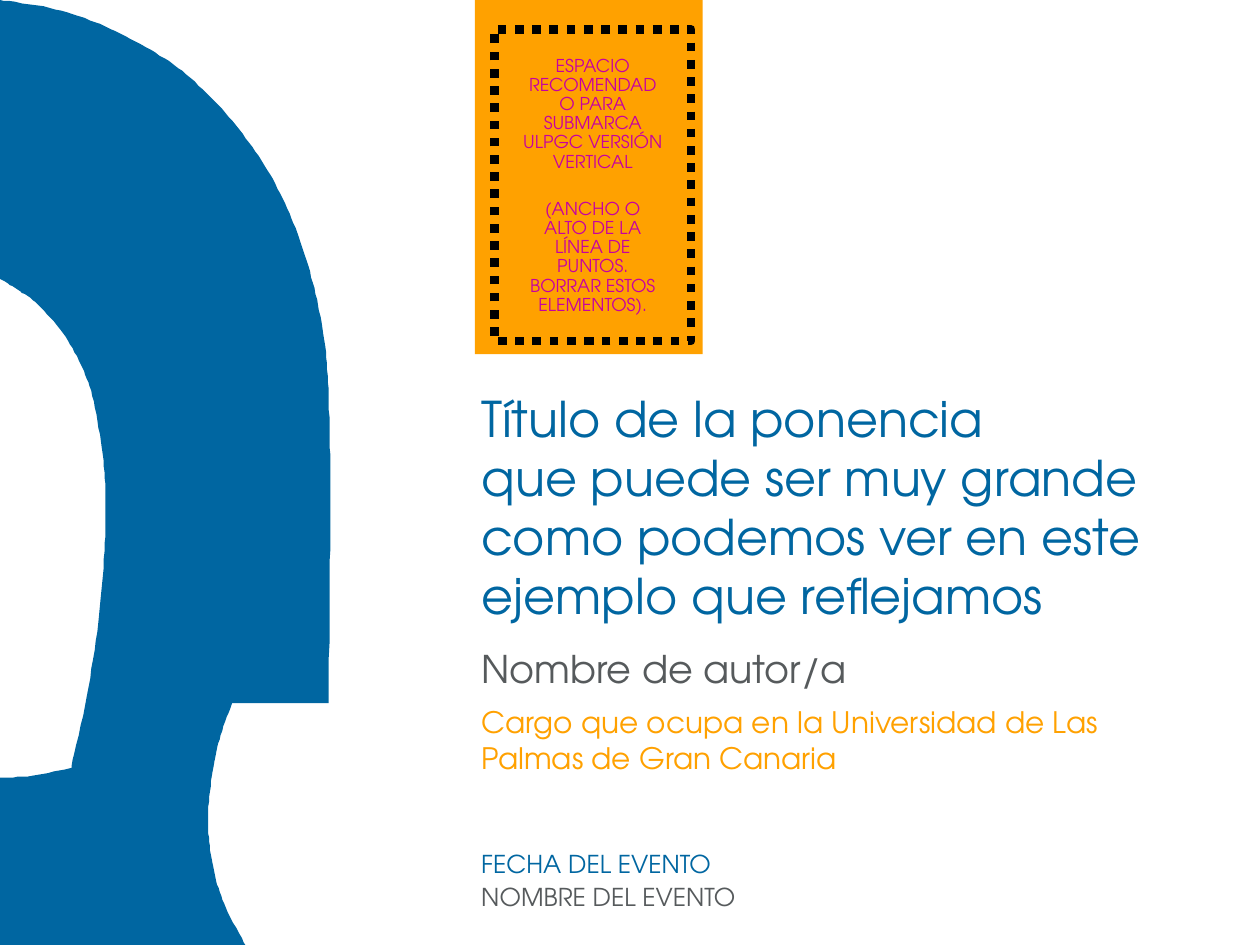
from pptx import Presentation
from pptx import util as u
from pptx.dml.color import RGBColor
from pptx.enum import dml, shapes, text

COLUMNS, ROWS = 1422, 1067
CELL = u.Inches(0.01)
FONT = "TeX Gyre Adventor"
COLORS = {"blue": "0066A1", "orange": "FFA100", "grey": "565A5C",
          "magenta": "C600A2", "black": "000000"}
CURVE_STEPS = 8

OUTER_ARCH = [(0, 0), (56, 9), (107, 25), (153, 47), (196, 73), (233, 105),
              (266, 141), (295, 181), (319, 224), (338, 270), (353, 319),
              (364, 371), (370, 424), (372, 488), (373, 565), (372, 678), (371, 794)]
NECK = [(262, 794), (249, 830), (240, 871), (235, 916), (236, 950),
        (243, 990), (255, 1025), (277, ROWS)]
INNER_BASE = [(0, 878), (36, 876), (81, 867)]
INNER_ARCH = [(81, 864), (98, 786), (111, 703), (118, 623), (119, 560),
              (115, 506), (104, 447), (91, 411), (71, 376), (43, 344),
              (20, 327), (0, 315)]
OUTLINE = [OUTER_ARCH, NECK, [(0, ROWS)], INNER_BASE, INNER_ARCH]

TITLE = ["Título de la ponencia", "que puede ser muy grande",
         "como podemos ver en este", "ejemplo que reflejamos"]
NOTE = ["ESPACIO RECOMENDADO PARA SUBMARCA ULPGC VERSIÓN VERTICAL",
        "(ANCHO O ALTO DE LA LÍNEA DE PUNTOS. BORRAR ESTOS ELEMENTOS)."]
DETAILS = [
    ("Nombre de autor/a", 296, 63, 31, "grey", "MIDDLE"),
    ("Cargo que ocupa en la Universidad de Las Palmas de Gran Canaria",
     362, 89, 24, "orange", "TOP"),
    ("FECHA DEL EVENTO", 526, 44, 20, "blue", "MIDDLE"),
    ("NOMBRE DEL EVENTO", 563, 44, 20, "grey", "MIDDLE"),
]


def set_attributes(target, values):
    for name, value in values.items():
        setattr(target, name, value)


def rgb(color):
    return RGBColor.from_string(COLORS[color])


def place(shape, box):
    names = ("left", "top", "width", "height")
    set_attributes(shape, dict(zip(names, (CELL * part for part in box))))


def write(shape, lines, size, color, anchor="MIDDLE", inset=6, frame_format=None,
          paragraph_format=None, gap=0):
    frame = shape.text_frame
    margins = ("margin_left", "margin_top", "margin_right", "margin_bottom")
    set_attributes(frame, dict.fromkeys(margins, CELL * inset))
    set_attributes(frame, {"word_wrap": True, "auto_size": text.MSO_AUTO_SIZE.NONE,
                           "vertical_anchor": text.MSO_ANCHOR[anchor],
                           **(frame_format or {})})
    for index, line in enumerate(lines):
        paragraph = frame.add_paragraph() if index else frame.paragraphs[0]
        set_attributes(paragraph, {"alignment": text.PP_ALIGN.LEFT,
                                   "space_before": u.Pt(gap if index else 0),
                                   **(paragraph_format or {})})
        run = paragraph.add_run()
        run.text = line
        set_attributes(run.font, {"name": FONT, "size": u.Pt(size)})
        run.font.color.rgb = rgb(color)


def add_text(slide, box, lines, size, color, **options):
    shape = slide.shapes.add_textbox(0, 0, 0, 0)
    place(shape, box)
    write(shape, lines, size, color, **options)


def add_rectangle(slide, box):
    shape = slide.shapes.add_shape(shapes.MSO_SHAPE.RECTANGLE, 0, 0, 0, 0)
    place(shape, box)
    shape.shadow.inherit = False
    return shape


def smooth(knots):
    padded = [knots[0], *knots, knots[-1]]
    points = [knots[0]]
    for before, start, end, after in zip(padded, padded[1:], padded[2:], padded[3:]):
        for step in range(1, CURVE_STEPS + 1):
            t = step / CURVE_STEPS
            points.append(tuple(
                b + t * (c - a) / 2 + t ** 2 * (2 * a - 5 * b + 4 * c - d) / 2
                + t ** 3 * (3 * b - a - 3 * c + d) / 2
                for a, b, c, d in zip(before, start, end, after)))
    return points


def add_arch(slide, box):
    left, top = box[:2]
    points = [(left + x, top + y) for curve in OUTLINE for x, y in smooth(curve)]
    builder = slide.shapes.build_freeform(*points[0], scale=CELL)
    builder.add_line_segments(points[1:], close=True)
    arch = builder.convert_to_shape()
    arch.shadow.inherit = False
    arch.fill.solid()
    arch.fill.fore_color.rgb = rgb("blue")
    arch.line.fill.background()


def add_brand_area(slide, box):
    left, top, width, height = box
    panel = add_rectangle(slide, box)
    panel.fill.solid()
    panel.fill.fore_color.rgb = rgb("orange")
    panel.line.fill.background()
    border = add_rectangle(slide, (left + 22, top + 33, width - 35, height - 48))
    border.fill.background()
    border.line.color.rgb = rgb("black")
    set_attributes(border.line, {"width": u.Pt(7),
                                 "dash_style": dml.MSO_LINE.ROUND_DOT})
    add_text(slide, (left + 46, top + 54, width - 83, height - 88), NOTE, 14.4,
             "magenta", inset=8, gap=23,
             paragraph_format={"alignment": text.PP_ALIGN.CENTER, "line_spacing": 0.9})


def add_talk_details(slide, box):
    left, top, width, height = box
    title = slide.shapes.title
    place(title, (left, top, width, 289))
    write(title, TITLE, 40, "blue")
    for line, offset, line_height, size, color, anchor in DETAILS:
        add_text(slide, (left, top + offset, width - 48, line_height), [line], size,
                 color, anchor=anchor,
                 frame_format={"auto_size": text.MSO_AUTO_SIZE.SHAPE_TO_FIT_TEXT})


def main():
    presentation = Presentation()
    set_attributes(presentation, {"slide_width": CELL * COLUMNS,
                                  "slide_height": CELL * ROWS})
    slide = presentation.slides.add_slide(presentation.slide_layouts[5])
    add_arch(slide, (0, 0, 373, ROWS))
    add_brand_area(slide, (536, 0, 257, 400))
    add_talk_details(slide, (537, 427, 846, 607))
    presentation.save("out.pptx")


if __name__ == "__main__":
    main()
